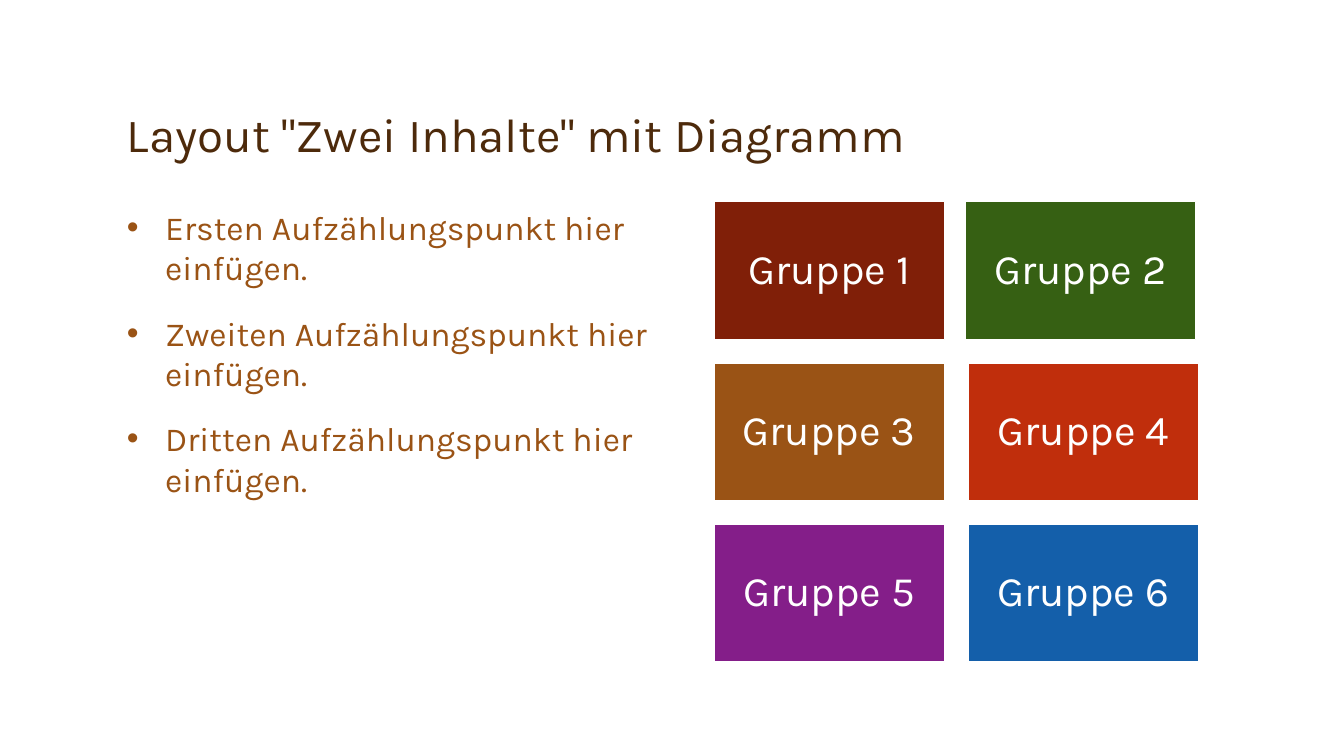
"""Build a slide with a bulleted list beside a grid of six coloured group tiles."""
import dataclasses

import lxml.etree
import pptx
import pptx.dml.color
import pptx.enum.shapes
import pptx.enum.text
import pptx.oxml.ns
import pptx.util

Inches = pptx.util.Inches
Pt = pptx.util.Pt
ANCHOR = pptx.enum.text.MSO_ANCHOR
ALIGN = pptx.enum.text.PP_ALIGN

TILE_W, TILE_H = 2.29, 1.37
GRID_LEFT, GRID_TOP, ROW_STEP = 7.08, 2, 1.6
BULLET_INDENT = 0.38


@dataclasses.dataclass(frozen=True)
class Tile:
    label: str
    fill: str
    left: float
    top: float


def color(value: str) -> pptx.dml.color.RGBColor:
    return pptx.dml.color.RGBColor.from_string(value)


def set_all(target: object, values: dict) -> None:
    for name, value in values.items():
        setattr(target, name, value)


def add_line(p, text: str, size: float, hex_color: str, **fmt) -> None:
    set_all(p, fmt)
    r = p.add_run()
    r.text = text
    set_all(r.font, {"name": "Karla", "size": Pt(size)})
    r.font.color.rgb = color(hex_color)


def add_bullet(p) -> None:
    pPr = p._p.get_or_add_pPr()
    indent = Inches(BULLET_INDENT)
    pPr.set("marL", str(indent))
    pPr.set("indent", str(-indent))
    for tag, key, value in (("a:buFont", "typeface", "Arial"), ("a:buChar", "char", "•")):
        lxml.etree.SubElement(pPr, pptx.oxml.ns.qn(tag)).set(key, value)


def add_text_box(s, left: float, top: float, width: float, height: float, anchor):
    tf = s.shapes.add_textbox(*map(Inches, (left, top, width, height))).text_frame
    set_all(tf, {"word_wrap": True, "vertical_anchor": anchor})
    return tf


def add_list(s, items: list[str]) -> None:
    tf = add_text_box(s, 1.16, 2, 5.42, 4.58, ANCHOR.TOP)
    for i, item in enumerate(items):
        p = tf.add_paragraph() if i else tf.paragraphs[0]
        add_bullet(p)
        add_line(p, item, 24, "9A5315", space_before=Pt(18 if i else 0))


def add_tile(s, tile: Tile) -> None:
    sp = s.shapes.add_shape(
        pptx.enum.shapes.MSO_SHAPE.RECTANGLE,
        *map(Inches, (tile.left, tile.top, TILE_W, TILE_H)),
    )
    sp.name = tile.label
    sp.shadow.inherit = False
    sp.fill.solid()
    sp.fill.fore_color.rgb = color(tile.fill)
    sp.line.color.rgb = color("FFFFFF")
    sp.line.width = Pt(1)
    tf = sp.text_frame
    set_all(tf, {"word_wrap": True, "vertical_anchor": ANCHOR.MIDDLE})
    set_all(tf, {f"margin_{side}": Inches(0.12) for side in ("left", "right", "top", "bottom")})
    add_line(tf.paragraphs[0], tile.label, 30, "FFFFFF", alignment=ALIGN.CENTER, line_spacing=0.9)


def group_tiles() -> list[Tile]:
    fills = ["801F08", "366013", "9A5315", "C02E0C", "841E89", "145FAA"]
    tiles = []
    for i, fill in enumerate(fills):
        row, col = divmod(i, 2)
        right_left = 9.6 if row else 9.57
        left = right_left if col else GRID_LEFT
        tiles.append(Tile(f"Gruppe {i + 1}", fill, left, GRID_TOP + row * ROW_STEP))
    return tiles


def main() -> None:
    prs = pptx.Presentation()
    set_all(prs, {"slide_width": Inches(13.33), "slide_height": Inches(7.5)})
    s = prs.slides.add_slide(prs.slide_layouts[6])
    title = add_text_box(s, 1.16, 0.33, 11, 1.33, ANCHOR.BOTTOM)
    add_line(title.paragraphs[0], 'Layout "Zwei Inhalte" mit Diagramm', 34, "4D2A0B", line_spacing=0.9)
    add_list(s, [f"{nth} Aufzählungspunkt hier einfügen." for nth in ("Ersten", "Zweiten", "Dritten")])
    for tile in group_tiles():
        add_tile(s, tile)
    prs.save("out.pptx")


if __name__ == "__main__":
    main()
